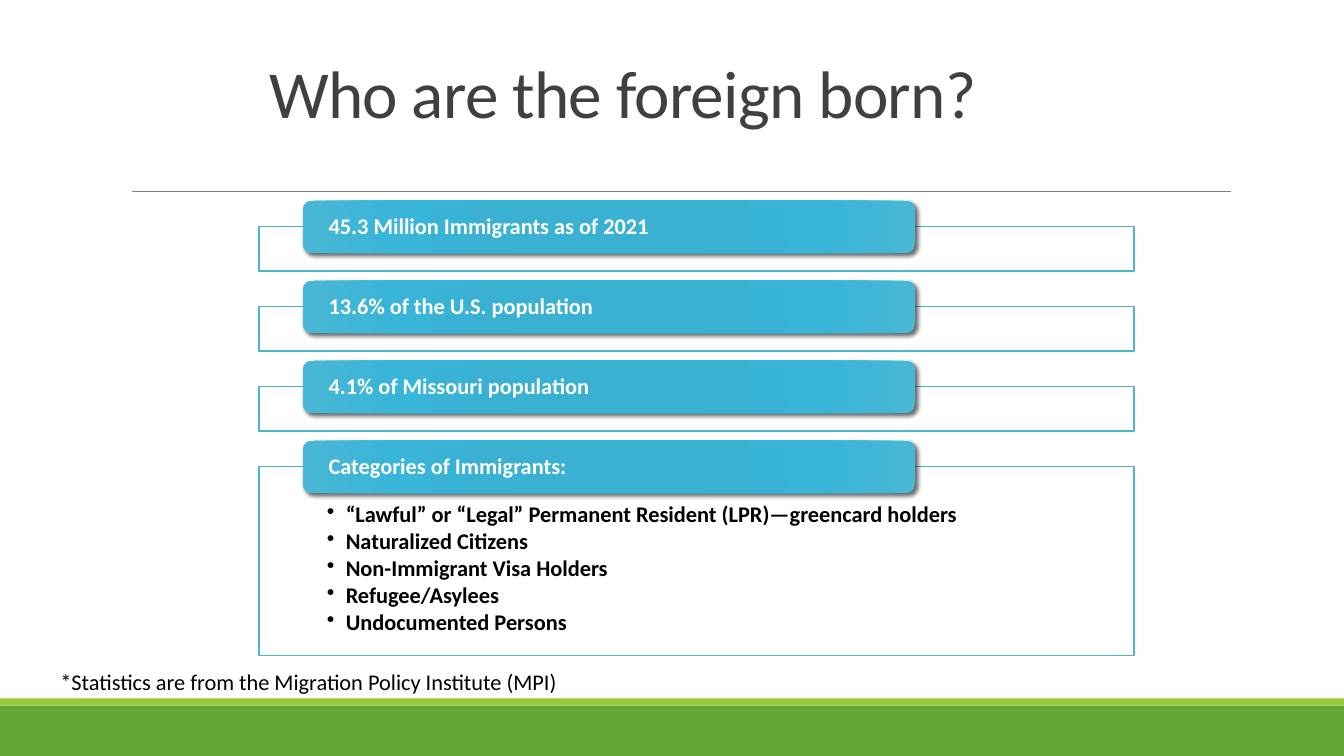
from pptx import Presentation
from pptx.dml.color import RGBColor
from pptx.enum.shapes import MSO_CONNECTOR as Connector, MSO_SHAPE as Shape
from pptx.enum.text import MSO_ANCHOR as Anchor, MSO_AUTO_SIZE as AutoSize, PP_ALIGN as Align
from pptx.oxml import parse_xml
from pptx.oxml.ns import nsdecls, qn
from pptx.util import Pt

FONT = "Calibri"
PITCH = 57.15
LABEL_STOPS = [(0, "37B1D3"), (34, "3AB1D2"), (70, "38B5D8"), (100, "48B7D5")]
FACTS = [
    ("45.3 Million Immigrants as of 2021", []),
    ("13.6% of the U.S. population", []),
    ("4.1% of Missouri population", []),
    ("Categories of Immigrants:", [
        "“Lawful” or “Legal” Permanent Resident (LPR)—greencard holders",
        "Naturalized Citizens",
        "Non-Immigrant Visa Holders",
        "Refugee/Asylees",
        "Undocumented Persons",
    ]),
]


def color(value):
    return RGBColor.from_string(value)


def element(tag, attributes="", content=""):
    return parse_xml(f"<a:{tag} {nsdecls('a')} {attributes}>{content}</a:{tag}>")


def set_font(para, size, value, bold=False):
    for span in para.runs:
        span.font.name = FONT
        span.font.size = Pt(size)
        span.font.bold = bold
        span.font.color.rgb = color(value)


def set_frame(box, anchor, left, top, right, bottom):
    frame = box.text_frame
    frame.word_wrap = True
    frame.auto_size = AutoSize.NONE
    frame.vertical_anchor = anchor
    frame.margin_left, frame.margin_top = Pt(left), Pt(top)
    frame.margin_right, frame.margin_bottom = Pt(right), Pt(bottom)
    return frame


def add_block(page, kind, left, top, width, height, fill):
    block = page.shapes.add_shape(kind, Pt(left), Pt(top), Pt(width), Pt(height))
    block.shadow.inherit = False
    block.fill.solid()
    block.fill.fore_color.rgb = color(fill)
    block.line.fill.background()
    return block


def add_backdrop(page):
    add_block(page, Shape.RECTANGLE, 0, 504, 960, 36, "63A537")
    add_block(page, Shape.RECTANGLE, 0, 498.75, 960, 5.25, "99CB38")
    rule = page.shapes.add_connector(Connector.STRAIGHT, Pt(94.5), Pt(136.8), Pt(879), Pt(136.8))
    rule.line.color.rgb = color("808080")
    rule.line.width = Pt(0.5)
    rule._element.spPr.append(element("effectLst"))


def add_title(page, left, top, width, height):
    title = page.shapes.title
    title.left, title.top, title.width, title.height = Pt(left), Pt(top), Pt(width), Pt(height)
    frame = set_frame(title, Anchor.BOTTOM, 7.2, 3.6, 7.2, 3.6)
    frame.text = "Who are the foreign born?"
    para = frame.paragraphs[0]
    para.alignment = Align.LEFT
    para.line_spacing = 0.85
    set_font(para, 48, "404040")
    para.runs[0].font._element.set("spc", "-50")


def add_details(page, items, left, top, width, height):
    panel = add_block(page, Shape.RECTANGLE, left, top, width, height, "FFFFFF")
    panel.line.color.rgb = color("4EB3CF")
    panel.line.width = Pt(1)
    white = panel._element.spPr.find(qn("a:solidFill"))[0]
    white.append(element("alpha", 'val="90000"'))
    if not items:
        return
    frame = set_frame(panel, Anchor.TOP, 48.5, 26, 48.5, 8.5)
    frame.text = "\n".join(items)
    for para in frame.paragraphs:
        para.alignment = Align.LEFT
        para.line_spacing = 0.9
        para.space_after = Pt(2)
        properties = para._p.get_or_add_pPr()
        properties.set("marL", str(Pt(13.5)))
        properties.set("indent", str(Pt(-13.5)))
        properties.append(element("buChar", 'char="•"'))
        set_font(para, 16, "000000", True)


def add_label(page, text, left, top, width, height):
    label = add_block(page, Shape.ROUNDED_RECTANGLE, left, top, width, height, "37B1D3")
    stops = "".join(
        f'<a:gs pos="{place * 1000}"><a:srgbClr val="{value}"/></a:gs>'
        for place, value in LABEL_STOPS
    )
    center = '<a:fillToRect l="100000" t="100000" r="100000" b="100000"/>'
    gradient = element(
        "gradFill", 'rotWithShape="1"',
        f'<a:gsLst>{stops}</a:gsLst><a:path path="circle">{center}</a:path>',
    )
    properties = label._element.spPr
    properties.replace(properties.find(qn("a:solidFill")), gradient)
    properties.find(qn("a:effectLst")).append(element(
        "outerShdw", f'blurRad="{Pt(3)}" dist="{Pt(2)}" dir="2700000" rotWithShape="0"',
        '<a:srgbClr val="000000"><a:alpha val="60000"/></a:srgbClr>',
    ))
    frame = set_frame(label, Anchor.MIDDLE, 16.7, 0, 16.7, 0)
    frame.text = text
    para = frame.paragraphs[0]
    para.alignment = Align.LEFT
    para.line_spacing = 0.9
    set_font(para, 16, "FFFFFF", True)


def add_facts(page, left, top, width):
    for index, (text, items) in enumerate(FACTS):
        label_top = top + index * PITCH
        add_details(page, items, left, label_top + 18.75, width, 134.75 if items else 31.75)
        add_label(page, text, left + 31.25, label_top, width * 0.7, 37.5)


def add_note(page, left, top, width, height):
    box = page.shapes.add_textbox(Pt(left), Pt(top), Pt(width), Pt(height))
    frame = set_frame(box, Anchor.TOP, 7.2, 3.6, 7.2, 3.6)
    frame.text = "*Statistics are from the Migration Policy Institute (MPI)"
    set_font(frame.paragraphs[0], 16, "000000")


def main():
    deck = Presentation()
    deck.slide_width, deck.slide_height = Pt(960), Pt(540)
    page = deck.slides.add_slide(deck.slide_layouts[5])
    add_backdrop(page)
    add_title(page, 185, 12.25, 594, 85.7)
    add_facts(page, 185, 143.25, 625)
    add_note(page, 36, 473.75, 519, 26.6)
    deck.save("out.pptx")


if __name__ == "__main__":
    main()
